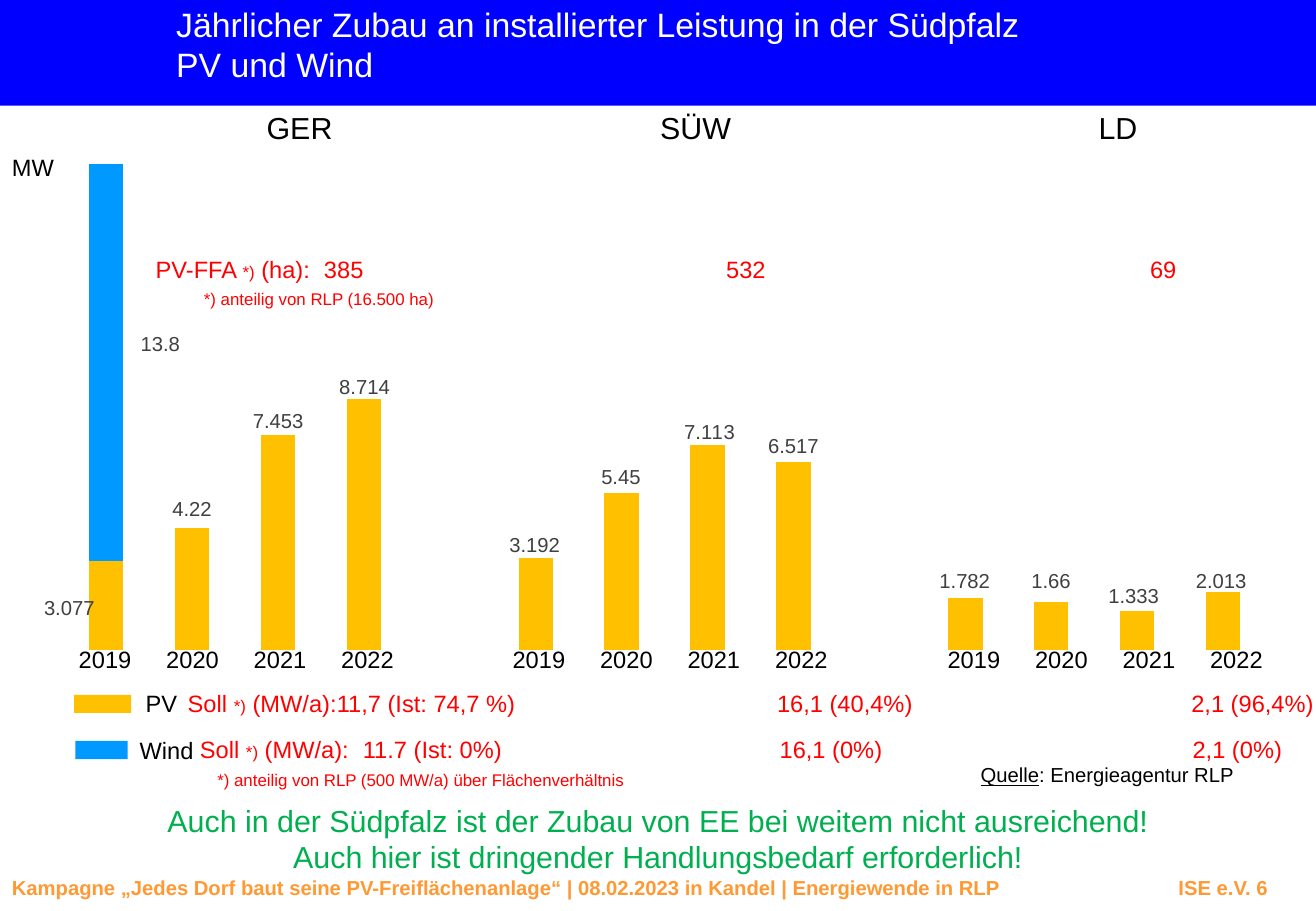
from dataclasses import dataclass

from lxml.etree import SubElement
from pptx import Presentation
from pptx.chart.data import CategoryChartData
from pptx.dml.color import RGBColor
from pptx.enum.chart import XL_CHART_TYPE
from pptx.enum.shapes import MSO_SHAPE
from pptx.enum.text import MSO_AUTO_SIZE, PP_ALIGN
from pptx.oxml import parse_xml
from pptx.oxml.ns import nsdecls, qn
from pptx.util import Emu, Pt

PX = 9144  # EMU per px, 100 px to the inch


@dataclass(frozen=True)
class Theme:
    font: str = "Arial"
    black: str = "000000"
    white: str = "FFFFFF"
    banner: str = "0000FF"
    pv: str = "FFC000"
    wind: str = "0099FF"
    target: str = "FF0000"
    appeal: str = "00B050"
    footer: str = "FF9933"
    value: str = "404040"
    title_size: int = 20
    heading_size: int = 18
    body_size: int = 14
    small_size: int = 12
    note_size: int = 10


@dataclass(frozen=True)
class Region:
    name: str
    heading: tuple        # left, width
    years_left: int
    pv: tuple             # MW per year
    wind: tuple
    pv_labels: tuple      # label centres on the slide
    area: tuple           # text, left, width
    pv_target: tuple
    wind_target: tuple


THEME = Theme()
YEARS = (2019, 2020, 2021, 2022)
REGIONS = (
    Region("GER", (209, 75), 55, (3.077, 4.22, 7.453, 8.714), (13.8, 0, 0, 0),
           ((57, 501), (158, 420), (229, 347), (300, 319)),
           ("385", 255, 54), ("11,7 (Ist: 74,7 %)", 252, 182),
           ("11.7 (Ist: 0%)", 273, 150)),
    Region("SÜW", (533, 79), 412, (3.192, 5.45, 7.113, 6.517), (0, 0, 0, 0),
           ((440, 449), (511, 393), (584, 356), (653, 368)),
           ("532", 587, 53), ("16,1 (40,4%)", 628, 133),
           ("16,1 (0%)", 630, 106)),
    Region("LD", (894, 52), 770, (1.782, 1.66, 1.333, 2.013), (0, 0, 0, 0),
           ((794, 479), (865, 479), (933, 491), (1005, 479)),
           ("69", 936, 42), ("2,1 (96,4%)", 969, 122),
           ("2,1 (0%)", 971, 94)),
)
WIND_LABEL = (132, 284)
SLOTS = len(YEARS) + 1  # four years and a gap per region
CATEGORIES = len(REGIONS) * SLOTS - 1

# Chart frame and plot area: left, top, width, height
FRAME = (31, 99, 1031, 444)
PLOT = (52, 132, 990, 403)
AXIS_MAX = 17


def px(*lengths):
    return [Emu(length * PX) for length in lengths]


def style(font, size, color, bold=None):
    font.name = THEME.font
    font.size = Pt(size)
    font.color.rgb = RGBColor.from_string(color)
    font.bold = bold


def add_block(slide, box, color):
    block = slide.shapes.add_shape(MSO_SHAPE.RECTANGLE, *px(*box))
    block.shadow.inherit = False
    block.fill.solid()
    block.fill.fore_color.rgb = RGBColor.from_string(color)
    block.line.fill.background()


def add_text(slide, box, lines, size=THEME.body_size, color=THEME.black,
             align=PP_ALIGN.LEFT, inset=(10, 5), wrap=False, fill=None,
             bold=None, tab=None):
    """Each line is a string or a list of (text, size, underline) runs."""
    holder = slide.shapes.add_textbox(*px(*box))
    if fill:
        holder.fill.solid()
        holder.fill.fore_color.rgb = RGBColor.from_string(fill)
    frame = holder.text_frame
    frame.word_wrap = wrap
    frame.auto_size = MSO_AUTO_SIZE.SHAPE_TO_FIT_TEXT
    frame.margin_left = frame.margin_right = Emu(inset[0] * PX)
    frame.margin_top = frame.margin_bottom = Emu(inset[1] * PX)
    for index, line in enumerate(lines):
        paragraph = frame.paragraphs[0] if index == 0 else frame.add_paragraph()
        paragraph.alignment = align
        if tab:
            stops = SubElement(paragraph._p.get_or_add_pPr(), qn("a:tabLst"))
            SubElement(stops, qn("a:tab"), pos=str(tab * PX), algn="l")
        if isinstance(line, str):
            paragraph.text = line
            style(paragraph.font, size, color, bold)
            continue
        for words, run_size, underline in line:
            run = paragraph.add_run()
            run.text = words
            style(run.font, run_size, color, bold)
            run.font.underline = underline


def add_starred(slide, box, before, after):
    body, note = THEME.body_size, THEME.note_size
    add_text(slide, box, [[(before, body, None), ("*)", note, None), (after, body, None)]],
             color=THEME.target, align=PP_ALIGN.RIGHT)


def layout_xml(x, y, size=None):
    parts = '<c:layoutTarget val="inner"/><c:xMode val="edge"/><c:yMode val="edge"/>' if size else ""
    parts += f'<c:x val="{x:.4f}"/><c:y val="{y:.4f}"/>'
    if size:
        parts += f'<c:w val="{size[0]:.4f}"/><c:h val="{size[1]:.4f}"/>'
    return parse_xml(f'<c:layout {nsdecls("c")}><c:manualLayout>{parts}</c:manualLayout></c:layout>')


def place_label(series, category, base, value, centre):
    """Move a value label from the middle of its bar to the given centre."""
    label = series.points[category].data_label
    style(label.font, THEME.small_size, THEME.value)
    bar_x = PLOT[0] + PLOT[2] * (category + 0.5) / CATEGORIES
    bar_y = PLOT[1] + PLOT[3] * (1 - (base + value / 2) / AXIS_MAX)
    offset = layout_xml((centre[0] - bar_x) / FRAME[2], (centre[1] - bar_y) / FRAME[3])
    index = series._element.xpath(f'.//c:dLbl/c:idx[@val="{category}"]')[0]
    index.addnext(offset)


def add_capacity_chart(slide):
    data = CategoryChartData()
    data.categories = [str(number + 1) for number in range(CATEGORIES)]
    for year_index, year in enumerate(YEARS):
        for source in ("pv", "wind"):
            values = [None] * CATEGORIES
            for region_index, region in enumerate(REGIONS):
                values[region_index * SLOTS + year_index] = getattr(region, source)[year_index]
            data.add_series(f"{source.upper()} {year}", values)
    chart = slide.shapes.add_chart(XL_CHART_TYPE.COLUMN_STACKED, *px(*FRAME), data).chart
    chart.has_legend = chart.has_title = False
    style(chart.font, THEME.note_size, THEME.black)
    chart.category_axis.visible = chart.value_axis.visible = False
    chart.value_axis.has_major_gridlines = False
    chart.value_axis.minimum_scale, chart.value_axis.maximum_scale = 0, AXIS_MAX

    plot_area = chart._chartSpace.chart.plotArea
    for automatic in plot_area.findall(qn("c:layout")):
        plot_area.remove(automatic)
    plot_area.insert(0, layout_xml((PLOT[0] - FRAME[0]) / FRAME[2], (PLOT[1] - FRAME[1]) / FRAME[3],
                                   (PLOT[2] / FRAME[2], PLOT[3] / FRAME[3])))

    bars = chart.plots[0]
    bars.gap_width, bars.overlap, bars.vary_by_categories = 150, 100, False
    for number, series in enumerate(bars.series):
        year_index, is_wind = divmod(number, 2)
        series.format.fill.solid()
        series.format.fill.fore_color.rgb = RGBColor.from_string(THEME.wind if is_wind else THEME.pv)
        series.data_labels.show_value = False
        for region_index, region in enumerate(REGIONS):
            category = region_index * SLOTS + year_index
            pv, wind = region.pv[year_index], region.wind[year_index]
            if not is_wind:
                place_label(series, category, 0, pv, region.pv_labels[year_index])
            elif wind:
                place_label(series, category, pv, wind, WIND_LABEL)
        for leader in series._element.iter(qn("c:showLeaderLines")):
            leader.set("val", "0")


def add_region(slide, region):
    left, width = region.heading
    add_text(slide, (left, 85, width, 40), [region.name], THEME.heading_size, align=PP_ALIGN.CENTER)
    for index, year in enumerate(YEARS):
        add_text(slide, (region.years_left + 72 * index, 526, 64, 34), [str(year)])
    for top, (words, left, width) in ((205, region.area), (562, region.pv_target),
                                      (600, region.wind_target)):
        add_text(slide, (left, top, width, 34), [words], color=THEME.target, align=PP_ALIGN.RIGHT)


def main():
    deck = Presentation()
    deck.slide_width, deck.slide_height = px(1083, 750)
    slide = deck.slides.add_slide(deck.slide_layouts[6])

    # Banner, title and footer
    add_block(slide, (0, 0, 1083, 87), THEME.banner)
    add_text(slide, (145, 3, 700, 67),
             ["Jährlicher Zubau an installierter Leistung in der Südpfalz", "PV und Wind"],
             THEME.title_size, THEME.white, inset=(0, 0))
    add_text(slide, (0, 716, 1083, 30),
             ["Kampagne „Jedes Dorf baut seine PV-Freiflächenanlage“ | 08.02.2023 in Kandel"
              " | Energiewende in RLP\tISE e.V. 6"],
             THEME.small_size, THEME.footer, wrap=True, bold=True, tab=960)

    # Chart and legend
    add_capacity_chart(slide)
    add_text(slide, (0, 121, 55, 34), ["MW"], fill=THEME.white)
    add_block(slide, (62, 610, 47, 15), THEME.wind)
    add_text(slide, (105, 601, 65, 34), ["Wind"], fill=THEME.white)
    add_block(slide, (61, 572, 47, 15), THEME.pv)
    add_text(slide, (110, 562, 46, 34), ["PV"], fill=THEME.white)

    # Regions with their targets
    for region in REGIONS:
        add_region(slide, region)
    add_starred(slide, (117, 205, 148, 34), "PV-FFA ", " (ha):")
    add_starred(slide, (139, 562, 148, 34), "Soll ", " (MW/a):")
    add_starred(slide, (149, 600, 148, 34), "Soll ", " (MW/a):")

    # Notes, source and appeal
    add_text(slide, (158, 233, 211, 27), ["*) anteilig von RLP (16.500 ha)"],
             THEME.note_size, THEME.target)
    add_text(slide, (169, 629, 358, 27), ["*) anteilig von RLP (500 MW/a) über Flächenverhältnis"],
             THEME.note_size, THEME.target)
    add_text(slide, (807, 628, 219, 20),
             [[("Quelle", THEME.small_size, True), (": Energieagentur RLP", THEME.small_size, None)]],
             inset=(0, 0))
    add_text(slide, (31, 653, 1021, 75),
             ["Auch in der Südpfalz ist der Zubau von EE bei weitem nicht ausreichend!",
              "Auch hier ist dringender Handlungsbedarf erforderlich!"],
             THEME.heading_size, THEME.appeal, PP_ALIGN.CENTER, inset=(7, 7), wrap=True)

    deck.save("out.pptx")


if __name__ == "__main__":
    main()
